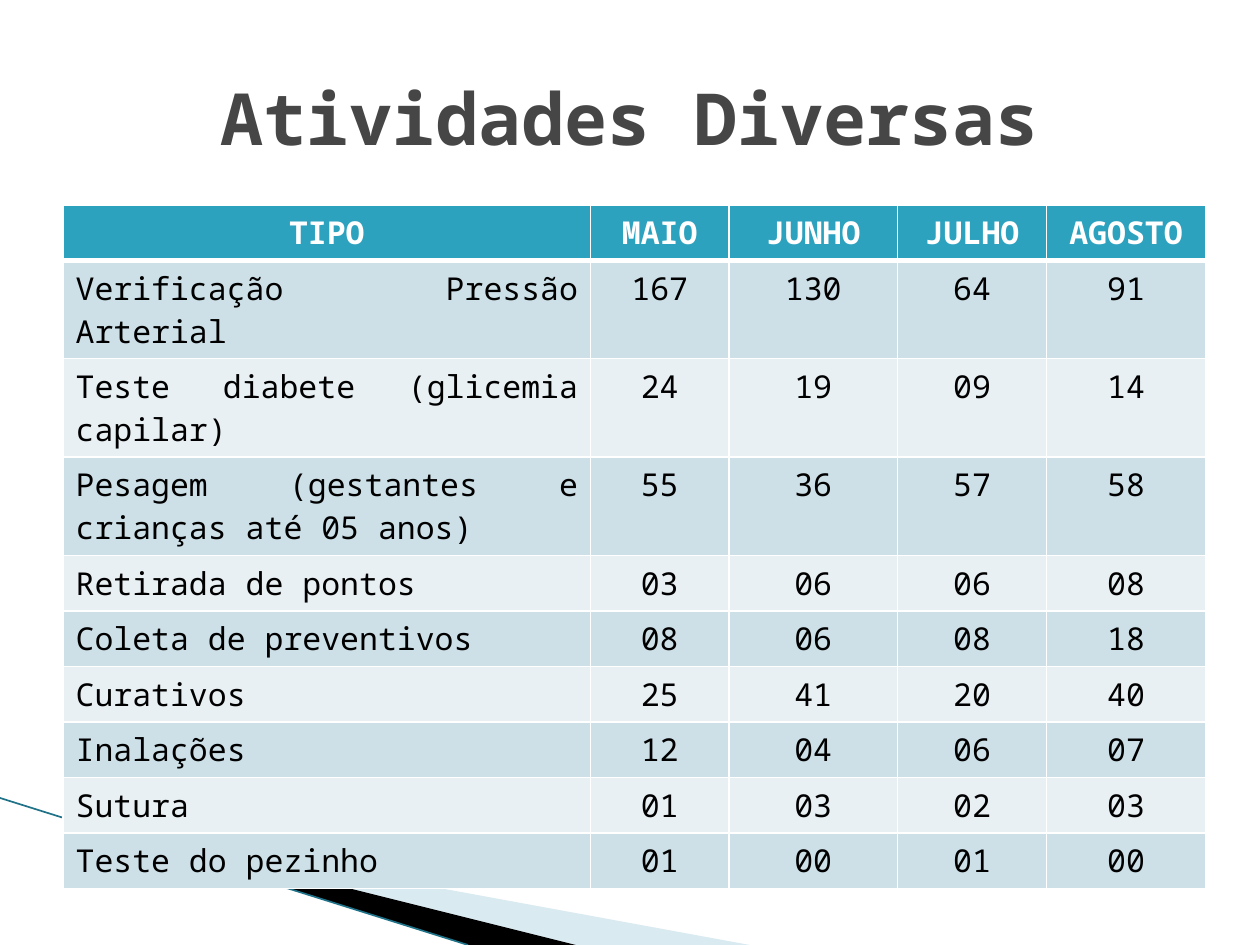
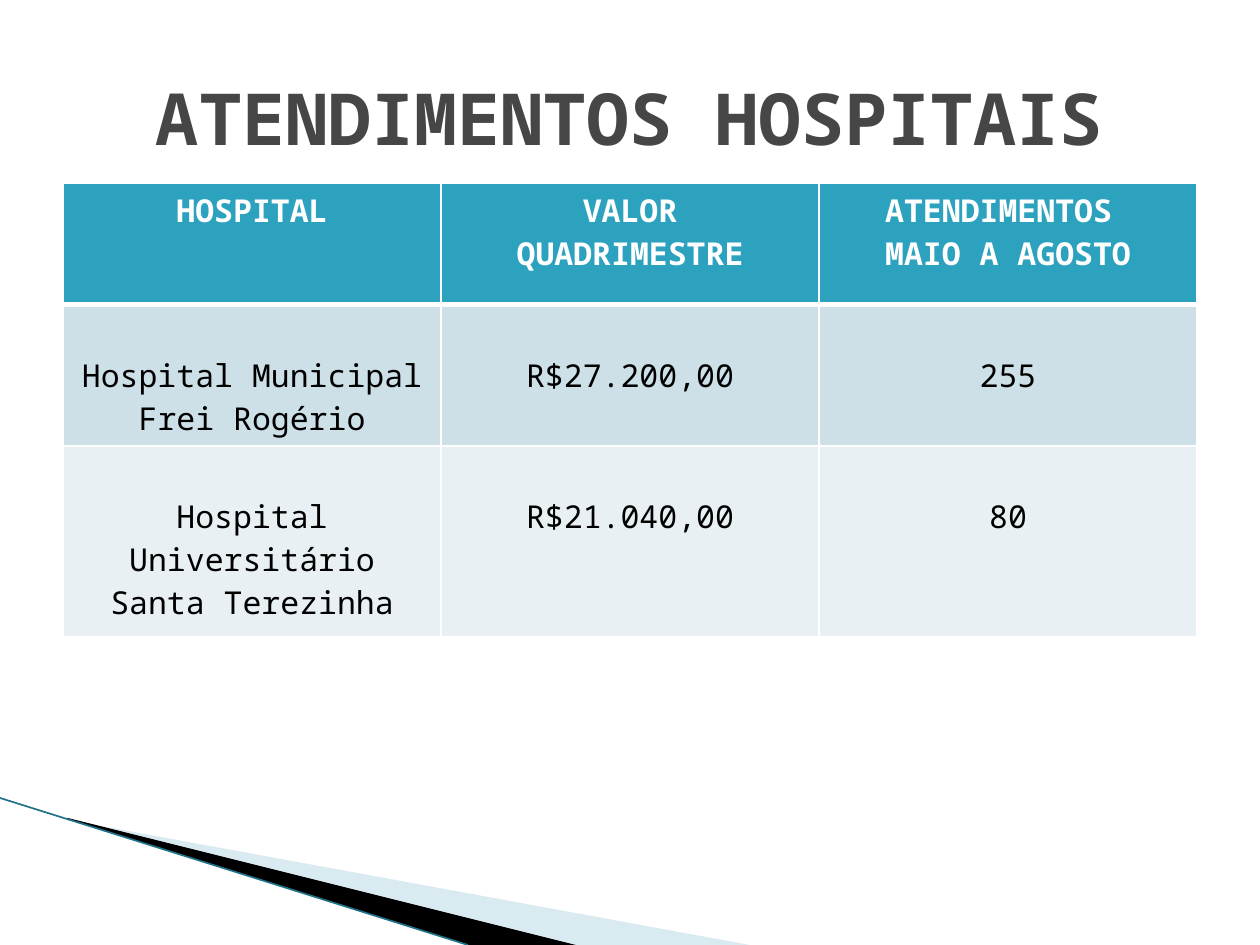
from dataclasses import dataclass

from lxml import etree
from pptx import Presentation
from pptx.dml.color import RGBColor
from pptx.enum.shapes import MSO_CONNECTOR
from pptx.enum.text import MSO_ANCHOR, PP_ALIGN
from pptx.oxml.ns import qn
from pptx.util import Pt

CENTER, JUSTIFY = PP_ALIGN.CENTER, PP_ALIGN.JUSTIFY
MIDDLE = MSO_ANCHOR.MIDDLE
STRAIGHT = MSO_CONNECTOR.STRAIGHT


@dataclass(frozen=True)
class Theme:
    font: str = "Noto Sans Mono"
    title_size: float = 41
    table_size: float = 18
    title: str = "464646"
    text: str = "000000"
    white: str = "FFFFFF"
    header: str = "2DA2BF"
    bands: tuple = ("CDE0E8", "E8F0F4")
    veil: str = "A0CBDC"
    veil_opacity: int = 40
    wedge: str = "000000"
    edge: str = "1F7288"
    edge_width: float = 0.95
    grid_width: float = 1
    header_rule: float = 3


class Deck:
    """Holds the theme and the slide being built."""

    def __init__(self, theme):
        self.theme = theme
        self.prs = Presentation()
        self.prs.slide_width, self.prs.slide_height = Pt(720), Pt(540)
        self.slide = None

    def new_slide(self):
        self.slide = self.prs.slides.add_slide(self.prs.slide_layouts[6])
        self.corner()

    def corner(self):
        """Draws the folded corner at the bottom left of every slide."""
        t = self.theme
        self.polygon([(39.6, 468.7), (428.4, 540), (328.3, 540), (39.6, 468)],
                     t.veil, t.veil_opacity)
        self.polygon([(38.2, 467.3), (329, 540), (268, 540), (38.9, 468)], t.wedge)
        self.line((0, 456), (267.5, 540), t.edge, t.edge_width)

    def polygon(self, points, color, opacity=100):
        start, *others = [(Pt(x), Pt(y)) for x, y in points]
        builder = self.slide.shapes.build_freeform(*start)
        builder.add_line_segments(others, close=True)
        shape = builder.convert_to_shape()
        shape.shadow.inherit = False
        shape.line.fill.background()
        shape.fill.solid()
        shape.fill.fore_color.rgb = RGBColor.from_string(color)
        if opacity < 100:
            rgb = shape._element.spPr.find(qn("a:solidFill")).find(qn("a:srgbClr"))
            etree.SubElement(rgb, qn("a:alpha"), val=str(opacity * 1000))

    def line(self, start, end, color, width):
        ends = [Pt(value) for value in (*start, *end)]
        connector = self.slide.shapes.add_connector(STRAIGHT, *ends)
        connector.line.color.rgb = RGBColor.from_string(color)
        connector.line.width = Pt(width)
        etree.SubElement(connector._element.spPr, qn("a:effectLst"))

    def set_text(self, frame, text, size, color, bold, align):
        """Puts each line of text in a paragraph of its own."""
        frame.word_wrap = True
        for index, words in enumerate(text.split("\n")):
            paragraph = frame.add_paragraph() if index else frame.paragraphs[0]
            paragraph.alignment = align
            run = paragraph.add_run()
            run.text = words
            run.font.name = self.theme.font
            run.font.size = Pt(size)
            run.font.bold = bold
            run.font.color.rgb = RGBColor.from_string(color)

    def title(self, text):
        box = self.slide.shapes.add_textbox(Pt(36), Pt(21.6), Pt(648), Pt(90))
        box.text_frame.vertical_anchor = MIDDLE
        self.set_text(box.text_frame, text, self.theme.title_size, self.theme.title,
                      True, CENTER)

    def borders(self, cell, row):
        """Draws the white grid, with a thicker rule below the header."""
        t = self.theme
        thick = {0: "lnB", 1: "lnT"}.get(row)
        properties = cell._tc.get_or_add_tcPr()
        for side in ("lnL", "lnR", "lnT", "lnB"):
            width = t.header_rule if side == thick else t.grid_width
            border = etree.SubElement(properties, qn("a:" + side), w=str(Pt(width)))
            fill = etree.SubElement(border, qn("a:solidFill"))
            etree.SubElement(fill, qn("a:srgbClr"), val=t.white)

    def table(self, top, widths, heights, rows, label_align=CENTER, body_top=3.6):
        t = self.theme
        table = self.slide.shapes.add_table(
            len(rows), len(widths), Pt(36), Pt(top),
            Pt(sum(widths)), Pt(sum(heights))).table
        table.horz_banding = False
        for column, width in zip(table.columns, widths):
            column.width = Pt(width)
        for r, (values, height) in enumerate(zip(rows, heights)):
            table.rows[r].height = Pt(height)
            is_header = r == 0
            for c, value in enumerate(values):
                cell = table.cell(r, c)
                self.borders(cell, r)
                cell.fill.solid()
                cell.fill.fore_color.rgb = RGBColor.from_string(
                    t.header if is_header else t.bands[(r - 1) % 2])
                if not is_header:
                    cell.margin_top = Pt(body_top)
                self.set_text(cell.text_frame, value, t.table_size,
                              t.white if is_header else t.text, is_header,
                              label_align if c == 0 and not is_header else CENTER)


ACTIVITIES = [
    ("TIPO", "MAIO", "JUNHO", "JULHO", "AGOSTO"),
    ("Verificação Pressão Arterial", "167", "130", "64", "91"),
    ("Teste diabete (glicemia capilar)", "24", "19", "09", "14"),
    ("Pesagem (gestantes e crianças até 05 anos)", "55", "36", "57", "58"),
    ("Retirada de pontos", "03", "06", "06", "08"),
    ("Coleta de preventivos", "08", "06", "08", "18"),
    ("Curativos", "25", "41", "20", "40"),
    ("Inalações", "12", "04", "06", "07"),
    ("Sutura", "01", "03", "02", "03"),
    ("Teste do pezinho", "01", "00", "01", "00"),
]

HOSPITALS = [
    ("HOSPITAL", "VALOR\nQUADRIMESTRE", "ATENDIMENTOS \nMAIO A AGOSTO"),
    ("Hospital Municipal\nFrei Rogério", "R$27.200,00", "255"),
    ("Hospital Universitário\nSanta Terezinha", "R$21.040,00", "80"),
]


def main():
    deck = Deck(Theme())

    deck.new_slide()
    deck.table(117, [301.5, 79, 96.5, 85, 91], [29.5] * len(ACTIVITIES),
               ACTIVITIES, label_align=JUSTIFY)
    deck.title("Atividades Diversas")

    deck.new_slide()
    deck.table(104.5, [216] * 3, [69.5, 75.5, 109], HOSPITALS, body_top=28.2)
    deck.title("ATENDIMENTOS HOSPITAIS")

    deck.prs.save("out.pptx")


if __name__ == "__main__":
    main()
